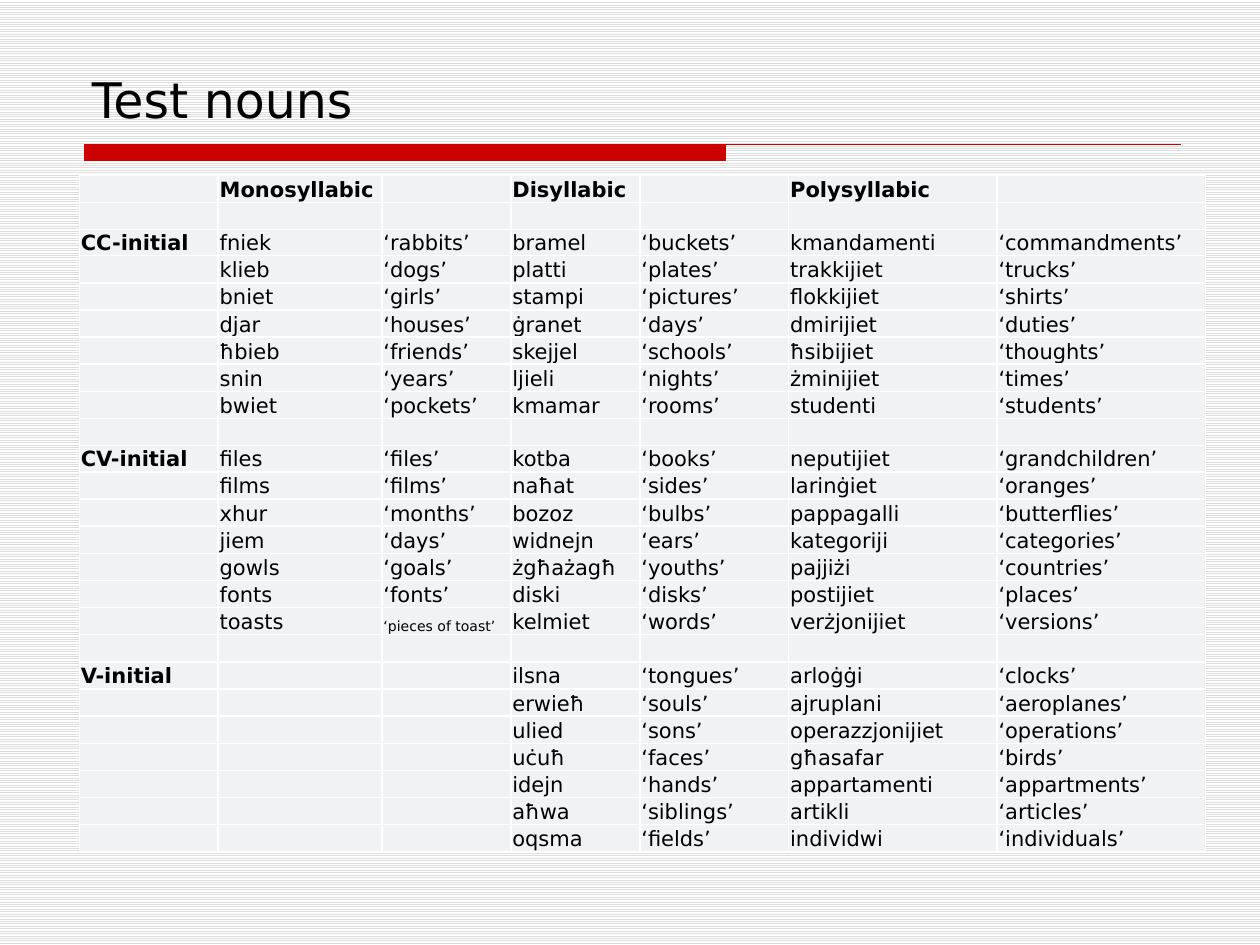
from dataclasses import dataclass

from lxml import etree
from pptx import Presentation
from pptx.dml.color import RGBColor
from pptx.enum.dml import MSO_PATTERN
from pptx.enum.shapes import MSO_CONNECTOR
from pptx.enum.text import MSO_ANCHOR, PP_ALIGN
from pptx.oxml.ns import qn
from pptx.util import Cm, Pt

STRIPES = MSO_PATTERN.LIGHT_HORIZONTAL
STRAIGHT = MSO_CONNECTOR.STRAIGHT
BOTTOM = MSO_ANCHOR.BOTTOM
LEFT = PP_ALIGN.LEFT


@dataclass
class Theme:
    font: str = "DejaVu Sans"
    ink: str = "000000"
    red: str = "CC0000"
    cell: str = "F0F2F4"
    white: str = "FFFFFF"
    stripe: str = "DDDDDD"
    title: int = 28
    body: int = 12
    small: int = 8


theme = Theme()
rgb = RGBColor.from_string


def write(frame, text, size=theme.body, bold=False):
    para = frame.paragraphs[0]
    para.alignment = LEFT
    if not text:
        # An empty cell still needs its type size to keep the row low
        etree.SubElement(para._p, qn("a:endParaRPr"), sz=str(size * 100))
        return
    run = para.add_run()
    run.text = text
    run.font.name = theme.font
    run.font.size = Pt(size)
    run.font.bold = bold
    run.font.color.rgb = rgb(theme.ink)


def edge(cell, color, width):
    props = cell._tc.get_or_add_tcPr()
    for side in ("lnL", "lnR", "lnT", "lnB"):
        line = etree.SubElement(props, qn("a:" + side), w=str(Pt(width)))
        fill = etree.SubElement(line, qn("a:solidFill"))
        etree.SubElement(fill, qn("a:srgbClr"), val=color)


# Nouns and glosses by initial, cells parted by bars
head = ["", "Monosyllabic", "", "Disyllabic", "", "Polysyllabic", ""]
nouns = {
    "CC-initial": [
        "fniek|‘rabbits’|bramel|‘buckets’|kmandamenti|‘commandments’",
        "klieb|‘dogs’|platti|‘plates’|trakkijiet|‘trucks’",
        "bniet|‘girls’|stampi|‘pictures’|flokkijiet|‘shirts’",
        "djar|‘houses’|ġranet|‘days’|dmirijiet|‘duties’",
        "ħbieb|‘friends’|skejjel|‘schools’|ħsibijiet|‘thoughts’",
        "snin|‘years’|ljieli|‘nights’|żminijiet|‘times’",
        "bwiet|‘pockets’|kmamar|‘rooms’|studenti|‘students’",
    ],
    "CV-initial": [
        "files|‘files’|kotba|‘books’|neputijiet|‘grandchildren’",
        "films|‘films’|naħat|‘sides’|larinġiet|‘oranges’",
        "xhur|‘months’|bozoz|‘bulbs’|pappagalli|‘butterflies’",
        "jiem|‘days’|widnejn|‘ears’|kategoriji|‘categories’",
        "gowls|‘goals’|żgħażagħ|‘youths’|pajjiżi|‘countries’",
        "fonts|‘fonts’|diski|‘disks’|postijiet|‘places’",
        "toasts|‘pieces of toast’|kelmiet|‘words’|verżjonijiet|‘versions’",
    ],
    "V-initial": [
        "||ilsna|‘tongues’|arloġġi|‘clocks’",
        "||erwieħ|‘souls’|ajruplani|‘aeroplanes’",
        "||ulied|‘sons’|operazzjonijiet|‘operations’",
        "||uċuħ|‘faces’|għasafar|‘birds’",
        "||idejn|‘hands’|appartamenti|‘appartments’",
        "||aħwa|‘siblings’|artikli|‘articles’",
        "||oqsma|‘fields’|individwi|‘individuals’",
    ],
}
widths = [2.8, 3.3, 2.6, 2.6, 3, 4.2, 4.2]
height = 0.53

# An empty row stands above each group, whose label is on its first row
rows = [head]
for label, lines in nouns.items():
    rows.append([""] * len(head))
    for i, line in enumerate(lines):
        rows.append([label if i == 0 else ""] + line.split("|"))

# Slide and striped background
deck = Presentation()
deck.slide_width, deck.slide_height = Cm(25.4), Cm(19.05)
slide = deck.slides.add_slide(deck.slide_layouts[5])
back = slide.background.fill
back.patterned()
back.pattern = STRIPES
back.fore_color.rgb = rgb(theme.stripe)
back.back_color.rgb = rgb(theme.white)

# Red bar with a thin line running on to the right
x, y = Cm(1.7), Cm(2.92)
end, low = Cm(14.63), Cm(3.23)
pen = slide.shapes.build_freeform(x, y)
pen.add_line_segments([(end, y), (end, low), (x, low)], close=True)
pen.move_to(x, y)
pen.add_line_segments([(Cm(23.8), y)], close=False)
bar = pen.convert_to_shape()
bar.shadow.inherit = False
bar.fill.solid()
bar.fill.fore_color.rgb = rgb(theme.red)
bar.line.color.rgb = rgb(theme.red)
bar.line.width = Pt(0.75)

# Foot line
foot = slide.shapes.add_connector(STRAIGHT, x, Cm(17.14), Cm(23.7), Cm(17.14))
foot.line.color.rgb = rgb(theme.red)
foot.line.width = Pt(0.25)
etree.SubElement(foot._element.spPr, qn("a:effectLst"))

# Title
title = slide.shapes.title
title.left, title.top = Cm(1.6), Cm(0.84)
title.width, title.height = Cm(22.23), Cm(1.88)
title.text_frame.vertical_anchor = BOTTOM
write(title.text_frame, "Test nouns", size=theme.title)

# Noun table
grid = slide.shapes.add_table(len(rows), len(widths), Cm(1.6), Cm(3.53),
                              Cm(sum(widths)), Cm(height * len(rows))).table
grid.first_row = grid.horz_banding = False
for col, width in zip(grid.columns, widths):
    col.width = Cm(width)
for r, row in enumerate(rows):
    grid.rows[r].height = Cm(height)
    for c, text in enumerate(row):
        cell = grid.cell(r, c)
        cell.margin_left = cell.margin_right = cell.margin_top = Cm(0.03)
        cell.margin_bottom = 0
        cell.vertical_anchor = BOTTOM
        edge(cell, theme.white, 1)
        cell.fill.solid()
        cell.fill.fore_color.rgb = rgb(theme.cell)
        size = theme.small if text == "‘pieces of toast’" else theme.body
        write(cell.text_frame, text, size=size, bold=r == 0 or c == 0)

deck.save("out.pptx")
